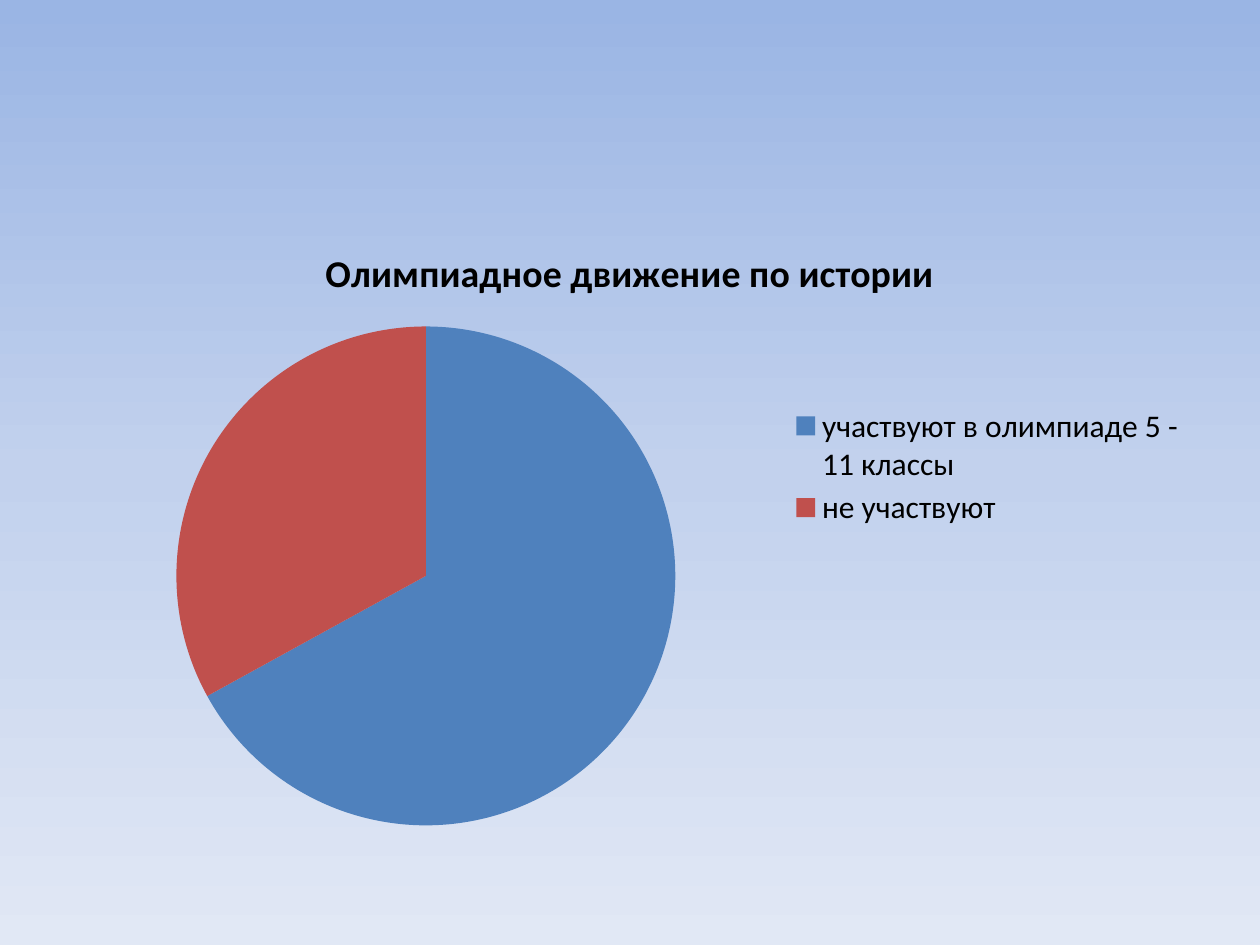
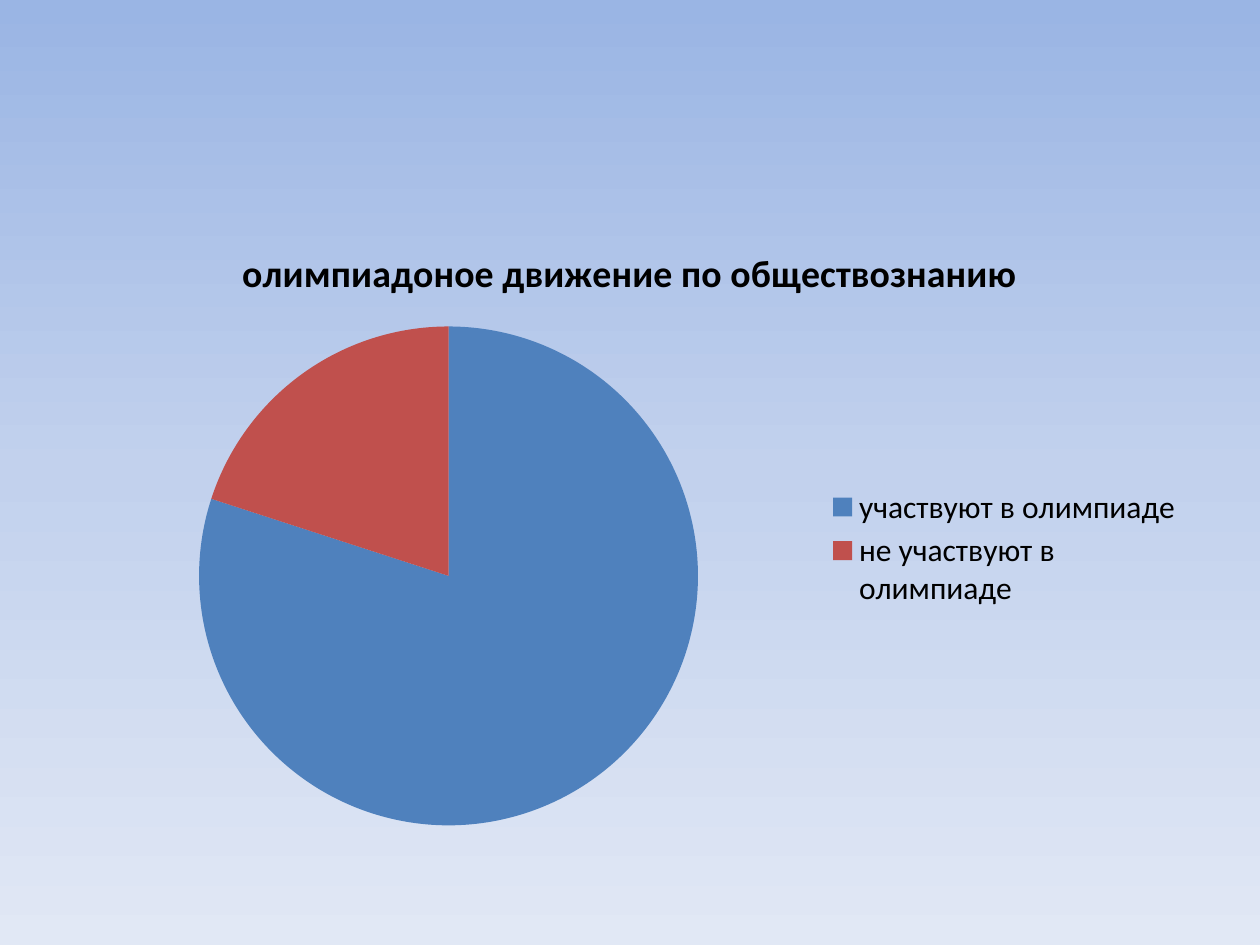
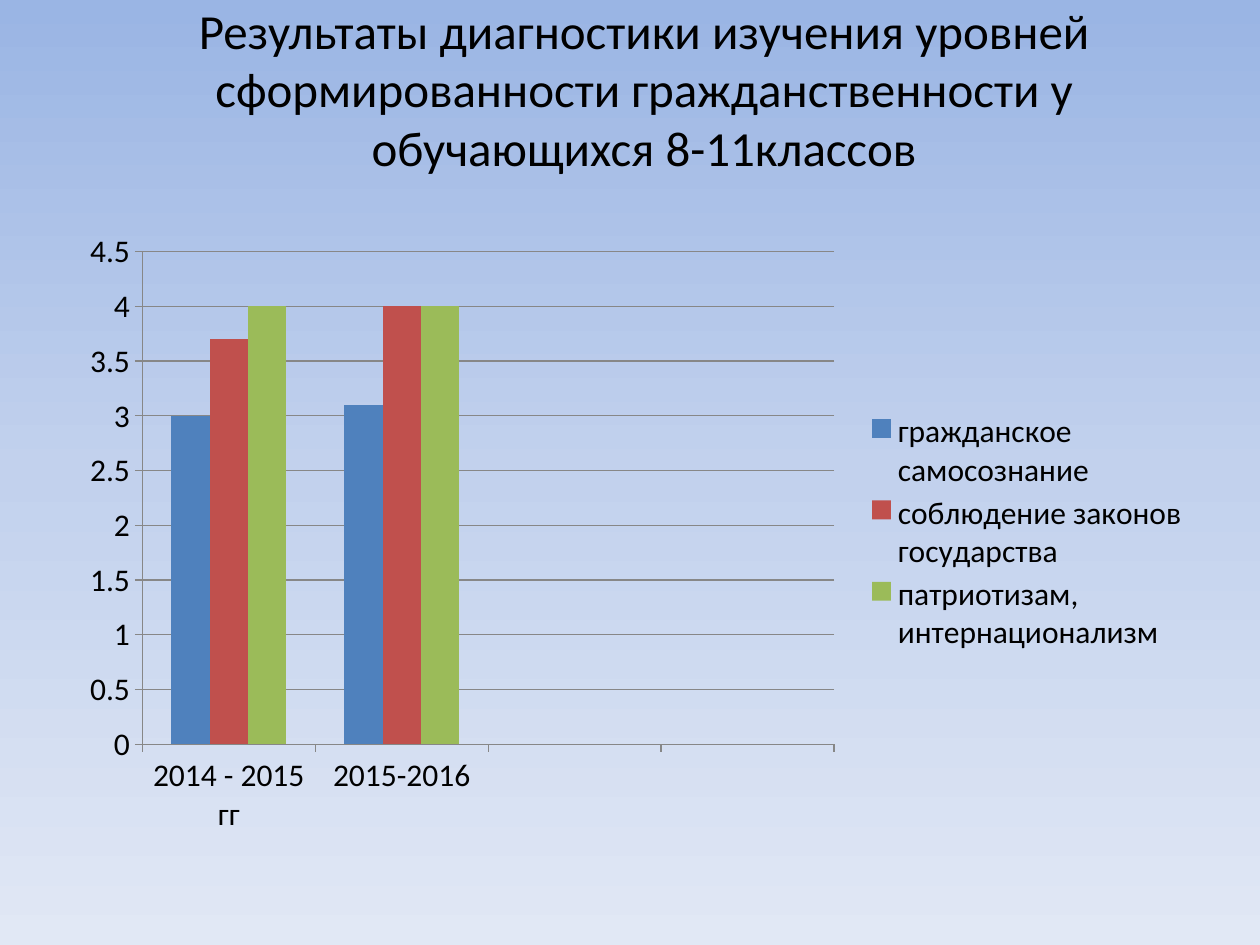
from copy import deepcopy

from lxml import etree
from pptx import Presentation
from pptx.chart.data import CategoryChartData
from pptx.dml.color import RGBColor
from pptx.enum.chart import XL_CHART_TYPE, XL_LEGEND_POSITION, XL_TICK_MARK
from pptx.enum.text import MSO_ANCHOR, MSO_AUTO_SIZE, PP_ALIGN
from pptx.oxml.ns import qn
from pptx.util import Pt

PIE = XL_CHART_TYPE.PIE
COLUMNS = XL_CHART_TYPE.COLUMN_CLUSTERED
LEGEND_RIGHT = XL_LEGEND_POSITION.RIGHT
TICK_OUTSIDE = XL_TICK_MARK.OUTSIDE
TICK_NONE = XL_TICK_MARK.NONE
ANCHOR_TOP = MSO_ANCHOR.TOP
NO_AUTOSIZE = MSO_AUTO_SIZE.NONE
CENTER = PP_ALIGN.CENTER

BLACK = RGBColor(0x00, 0x00, 0x00)
GRAY = RGBColor(0x87, 0x87, 0x87)
BLUE = RGBColor(0x4F, 0x81, 0xBD)
RED = RGBColor(0xC0, 0x50, 0x4D)
GREEN = RGBColor(0x9B, 0xBB, 0x59)
CHART_COLORS = (BLUE, RED, GREEN)
BACKGROUND_COLORS = (
    RGBColor(0x9A, 0xB5, 0xE4),
    RGBColor(0xC2, 0xD1, 0xED),
    RGBColor(0xE1, 0xE8, 0xF5),
)
FONT = "Calibri"
CHART_BOX = (Pt(36), Pt(126), Pt(648), Pt(356.4))
TITLE_ONLY_LAYOUT = 5
BLANK_LAYOUT = 6


def set_background(master):
    fill = master.background.fill
    fill.gradient()
    fill.gradient_angle = 270
    stop_list = master.element.find(".//" + qn("a:gsLst"))
    stop_list.insert(1, deepcopy(stop_list[0]))
    for index, color in enumerate(BACKGROUND_COLORS):
        stop = fill.gradient_stops[index]
        stop.color.rgb = color
        stop.position = index / 2


def format_font(font, size, bold=False):
    font.name = FONT
    font.size = Pt(size)
    font.bold = bold
    font.color.rgb = BLACK


def place_title(slide, text):
    title = slide.shapes.title
    title.left, title.top, title.width, title.height = Pt(36), Pt(0), Pt(664), Pt(128)
    frame = title.text_frame
    frame.auto_size = NO_AUTOSIZE
    frame.word_wrap = True
    frame.vertical_anchor = ANCHOR_TOP
    frame.margin_top = Pt(0)
    paragraph = frame.paragraphs[0]
    paragraph.alignment = CENTER
    run = paragraph.add_run()
    run.text = text
    format_font(run.font, 28)


def set_layout(chart, part_name, box, inner=False):
    part = chart.element.find(".//" + qn(part_name))
    for old_layout in part.findall(qn("c:layout")):
        part.remove(old_layout)
    layout = etree.Element(qn("c:layout"))
    manual = etree.SubElement(layout, qn("c:manualLayout"))
    settings = [("layoutTarget", "inner")] if inner else []
    settings += [("xMode", "edge"), ("yMode", "edge")]
    settings += zip("xywh", map(str, box))
    for name, value in settings:
        etree.SubElement(manual, qn("c:" + name)).set("val", value)
    part.insert(0 if inner else 1, layout)


def add_chart(slide, kind, categories, series, plot_box, legend_box):
    data = CategoryChartData()
    data.categories = categories
    for name, values in series:
        data.add_series(name, values)
    chart = slide.shapes.add_chart(kind, *CHART_BOX, data).chart
    format_font(chart.font, 18)
    chart.has_legend = True
    chart.legend.position = LEGEND_RIGHT
    chart.legend.include_in_layout = False
    set_layout(chart, "c:plotArea", plot_box, inner=True)
    set_layout(chart, "c:legend", legend_box)
    return chart


def paint(items):
    for item, color in zip(items, CHART_COLORS):
        item.format.fill.solid()
        item.format.fill.fore_color.rgb = color


def add_pie(slide, title, shares, plot_left, legend_box):
    chart = add_chart(slide, PIE, list(shares), [(title, list(shares.values()))],
                      (plot_left, 0.17, 0.44, 0.8), legend_box)
    chart.has_title = True
    run = chart.chart_title.text_frame.paragraphs[0].add_run()
    run.text = title
    format_font(run.font, 21.6, bold=True)
    points = chart.plots[0].series[0].points
    paint(points[index] for index in range(len(shares)))


def add_columns(slide, categories, series, plot_box, legend_box):
    chart = add_chart(slide, COLUMNS, categories, series, plot_box, legend_box)
    chart.has_title = False
    plot = chart.plots[0]
    plot.gap_width = 150
    plot.overlap = 0
    plot.vary_by_categories = False
    paint(plot.series)
    for axis in (chart.category_axis, chart.value_axis):
        axis.major_tick_mark = TICK_OUTSIDE
        axis.minor_tick_mark = TICK_NONE
        axis.format.line.color.rgb = GRAY
    scale = chart.value_axis
    scale.minimum_scale = 0
    scale.maximum_scale = 4.5
    scale.major_unit = 0.5
    scale.has_major_gridlines = True
    scale.major_gridlines.format.line.color.rgb = GRAY


def main():
    presentation = Presentation()
    presentation.slide_width = Pt(720)
    presentation.slide_height = Pt(540)
    set_background(presentation.slide_master)
    layouts = presentation.slide_layouts

    history = presentation.slides.add_slide(layouts[BLANK_LAYOUT])
    add_pie(history, "Олимпиадное движение по истории",
            {"участвуют в олимпиаде 5 - 11 классы": 67, "не участвуют": 33},
            0.1, (0.64, 0.29, 0.35, 0.21))

    social_studies = presentation.slides.add_slide(layouts[BLANK_LAYOUT])
    add_pie(social_studies, "олимпиадоное движение по обществознанию",
            {"участвуют в олимпиаде": 80, "не участвуют в олимпиаде": 20},
            0.12, (0.67, 0.42, 0.32, 0.21))

    diagnostics = presentation.slides.add_slide(layouts[TITLE_ONLY_LAYOUT])
    place_title(diagnostics, "Результаты диагностики изучения уровней "
                "сформированности гражданственности у обучающихся 8-11классов")
    add_columns(diagnostics, ["2014 - 2015 гг", "2015-2016", "", ""], [
        ("гражданское самосознание", (3, 3.1, None, None)),
        ("соблюдение законов государства", (3.7, 4, None, None)),
        ("патриотизам, интернационализм", (4, 4, None, None)),
    ], (0.07, 0.05, 0.61, 0.79), (0.7, 0.3, 0.3, 0.4))

    presentation.save("out.pptx")


if __name__ == "__main__":
    main()
